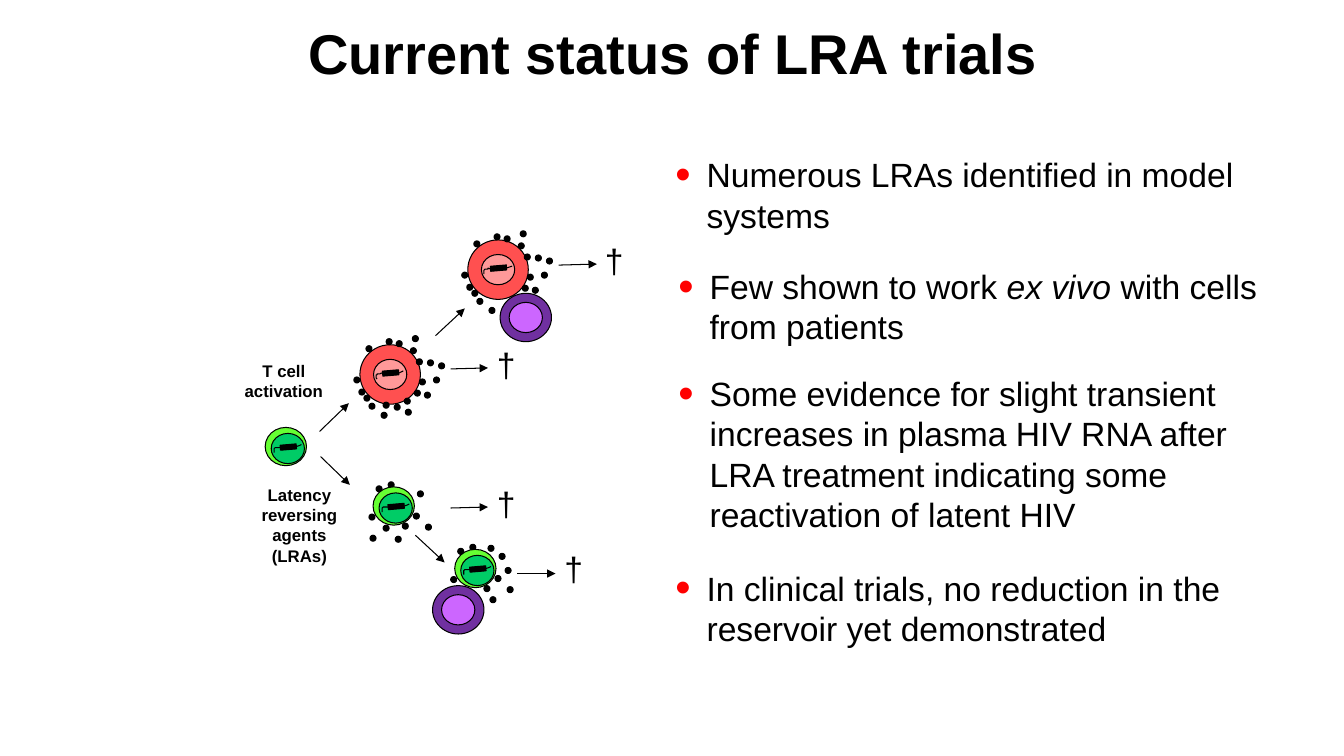
from lxml import etree
from pptx import Presentation
from pptx import util as u
from pptx.dml.color import RGBColor
from pptx.enum import shapes, text
from pptx.oxml import ns

COLUMNS, ROWS = 1333, 750  # grid of hundredths of an inch
FONT, BLACK = "Arial", "000000"
NUCLEUS = (33, 30)
VIRION = 6

# kind: (width, height, cell colour, nucleus colour, nucleus shift)
CELLS = {
    "resting": (41, 38, "66FF33", "00CC66", 2),
    "activated": (60, 59, "FF5050", "FF9999", 0),
    "killer": (51, 48, "7030A0", "CC66FF", 0),
}

# Virions as (column, row) from the corner of the cell they leave
ACTIVATED_VIRIONS = [
    (56, 14), (6, 1), (59, 34), (36, -4), (-6, 32), (4, 50), (50, 3),
    (54, 45), (9, 58), (78, 18), (26, -6), (52, -9), (67, 15), (73, 32),
    (-1, 44), (64, 47), (21, 67)]
ACTIVATED_LOWER_VIRIONS = [(23, 57), (44, 53), (34, 59), (45, 64)]
RESTING_VIRIONS = [
    (44, 4), (3, -1), (29, 36), (-4, 27), (40, 26), (15, -5), (52, 37)]
RESTING_LOWER_VIRIONS = [(10, 38), (-3, 48), (22, 49)]
RESTING_RIGHT_VIRIONS = [(35, 47), (33, -4), (50, 18)]

ARROWS = [
    (317, 428, 346, 400), (318, 453, 347, 481), (412, 531, 441, 558),
    (432, 333, 461, 306), (447, 366, 484, 365), (447, 504, 484, 503),
    (513, 569, 551, 569), (554, 263, 592, 262)]
DAGGERS = [(483, 336), (483, 474), (550, 539), (590, 233)]

LABELS = [
    ((227, 353, 109, 50), ["T cell activation"]),
    ((242, 476, 110, 91), ["Latency reversing", "agents (LRAs)"]),
]
BULLETS = [
    (610, 148, 91, [("Numerous LRAs identified in model systems", False)]),
    (613, 259, 91, [("Few shown to work ", False), ("ex vivo ", True),
                    ("with cells from patients", False)]),
    (613, 365, 172, [("Some evidence for slight transient increases in plasma "
                      "HIV RNA after LRA treatment indicating some "
                      "reactivation of latent HIV", False)]),
    (610, 558, 91, [("In clinical trials, no reduction in the reservoir yet "
                     "demonstrated", False)]),
]
BULLETS_RIGHT = 1271


def grid(*counts):
    return [u.Inches(count / 100) for count in counts]


def color(value):
    return RGBColor.from_string(value)


def apply(target, formats):
    for name, value in formats.items():
        setattr(target, name, value)


def outline(shape):
    shape.line.color.rgb = color(BLACK)
    shape.line.width = u.Pt(0.75)


def add_filled(slide, kind, left, top, width, height, fill):
    shape = slide.shapes.add_shape(kind, *grid(left, top, width, height))
    shape.shadow.inherit = False
    shape.fill.solid()
    shape.fill.fore_color.rgb = color(fill)
    outline(shape)
    return shape


def add_ellipse(slide, left, top, width, height, fill):
    add_filled(slide, shapes.MSO_SHAPE.OVAL, left, top, width, height, fill)


def bezier(start, first, second, end, steps=8):
    """Return points along a cubic curve, without its start."""
    points = []
    for step in range(1, steps + 1):
        t = step / steps
        weights = ((1 - t) ** 3, 3 * t * (1 - t) ** 2, 3 * t * t * (1 - t), t ** 3)
        points.append(tuple(
            sum(weight * value for weight, value in zip(weights, axis))
            for axis in zip(start, first, second, end)))
    return points


def add_genome(slide, left, top):
    """Draw the viral strand and its block in the nucleus at left, top."""
    knots = [(3, 19), (3, 18), (2, 17), (3, 15), (4, 14), (7, 14), (7, 14),
             (12, 14), (25, 15), (30, 11)]
    knots = [(left + x, top + y) for x, y in knots]
    points = [point for i in range(0, 9, 3) for point in bezier(*knots[i:i + 4])]
    builder = slide.shapes.build_freeform(*knots[0], scale=u.Inches(0.01))
    builder.add_line_segments(points, close=False)
    strand = builder.convert_to_shape()
    strand.shadow.inherit = False
    strand.fill.background()
    outline(strand)
    block = add_filled(slide, shapes.MSO_SHAPE.RECTANGLE, left + 9, top + 11, 16, 5, BLACK)
    block.rotation = 355.2


def add_cell(slide, kind, left, top):
    width, height, body, core, shift = CELLS[kind]
    add_ellipse(slide, left, top, width, height, body)
    core_left = left + (width - NUCLEUS[0]) / 2 + shift
    core_top = top + (height - NUCLEUS[1]) / 2 + shift
    add_ellipse(slide, core_left, core_top, *NUCLEUS, core)
    if kind != "killer":
        add_genome(slide, core_left, core_top)


def add_virions(slide, left, top, offsets):
    for column, row in offsets:
        add_ellipse(slide, left + column, top + row, VIRION, VIRION, BLACK)


def add_arrow(slide, *ends):
    arrow = slide.shapes.add_connector(shapes.MSO_CONNECTOR.STRAIGHT, *grid(*ends))
    outline(arrow)
    etree.SubElement(arrow.line._get_or_add_ln(), ns.qn("a:tailEnd"), type="triangle")
    etree.SubElement(arrow._element.spPr, ns.qn("a:effectLst"))


def write(paragraph, runs, size, bold=False):
    """Add (wording, italic) runs to the paragraph."""
    for wording, italic in runs:
        run = paragraph.add_run()
        run.text = wording
        apply(run.font, {"name": FONT, "size": u.Pt(size), "bold": bold, "italic": italic})
        run.font.color.rgb = color(BLACK)


def add_text(slide, place, paragraphs, size, bold=False, align=None, wrap=True):
    frame = slide.shapes.add_textbox(*grid(*place)).text_frame
    apply(frame, {"word_wrap": wrap, "auto_size": text.MSO_AUTO_SIZE.SHAPE_TO_FIT_TEXT})
    for index, runs in enumerate(paragraphs):
        paragraph = frame.add_paragraph() if index else frame.paragraphs[0]
        paragraph.alignment = align
        write(paragraph, runs, size, bold)
    return frame


def indent(paragraph, margin, hanging):
    properties = paragraph._p.get_or_add_pPr()
    properties.set("marL", str(u.Inches(margin)))
    properties.set("indent", str(-u.Inches(hanging)))
    return properties


def add_bullet(slide, left, top, height, runs):
    frame = add_text(slide, (left, top, BULLETS_RIGHT - left, height), [runs], 24)
    paragraph = frame.paragraphs[0]
    paragraph.level = 1
    properties = indent(paragraph, 0.81, 0.31)
    tint = etree.SubElement(properties, ns.qn("a:buClr"))
    etree.SubElement(tint, ns.qn("a:srgbClr"), val="FF0000")
    etree.SubElement(properties, ns.qn("a:buSzPct"), val="130000")
    etree.SubElement(properties, ns.qn("a:buFont"), typeface=FONT)
    etree.SubElement(properties, ns.qn("a:buChar"), char="•")


def set_title(slide, wording):
    title = slide.shapes.title
    apply(title, dict(zip(("left", "top", "width", "height"), grid(167, 13, 1000, 77))))
    apply(title.text_frame, {"word_wrap": True, "vertical_anchor": text.MSO_ANCHOR.TOP,
                             "auto_size": text.MSO_AUTO_SIZE.SHAPE_TO_FIT_TEXT})
    paragraph = title.text_frame.paragraphs[0]
    paragraph.alignment = text.PP_ALIGN.CENTER
    indent(paragraph, 0.38, 0.38)
    write(paragraph, [(wording, False)], 40, bold=True)


def main():
    presentation = Presentation()
    presentation.slide_width, presentation.slide_height = grid(COLUMNS, ROWS)
    slide = presentation.slides.add_slide(presentation.slide_layouts[5])
    set_title(slide, "Current status of LRA trials")
    for bullet in BULLETS:
        add_bullet(slide, *bullet)
    for place, lines in LABELS:
        add_text(slide, place, [[(line, False)] for line in lines], 12, True,
                 text.PP_ALIGN.CENTER)

    add_cell(slide, "resting", 263, 424)
    for left, top, extra in ((357, 342, ACTIVATED_LOWER_VIRIONS), (464, 238, [])):
        add_cell(slide, "activated", left, top)
        add_virions(slide, left, top, ACTIVATED_VIRIONS + extra)
    for left, top, extra in ((370, 483, RESTING_LOWER_VIRIONS),
                             (451, 545, RESTING_RIGHT_VIRIONS)):
        add_virions(slide, left, top, RESTING_VIRIONS + extra)
        add_cell(slide, "resting", left, top)
    for corner in ((429, 581), (496, 291)):
        add_cell(slide, "killer", *corner)

    for arrow in ARROWS:
        add_arrow(slide, *arrow)
    for left, top in DAGGERS:
        add_text(slide, (left, top, 39, 51), [[("†", False)]], 24, wrap=False)
    presentation.save("out.pptx")


if __name__ == "__main__":
    main()
